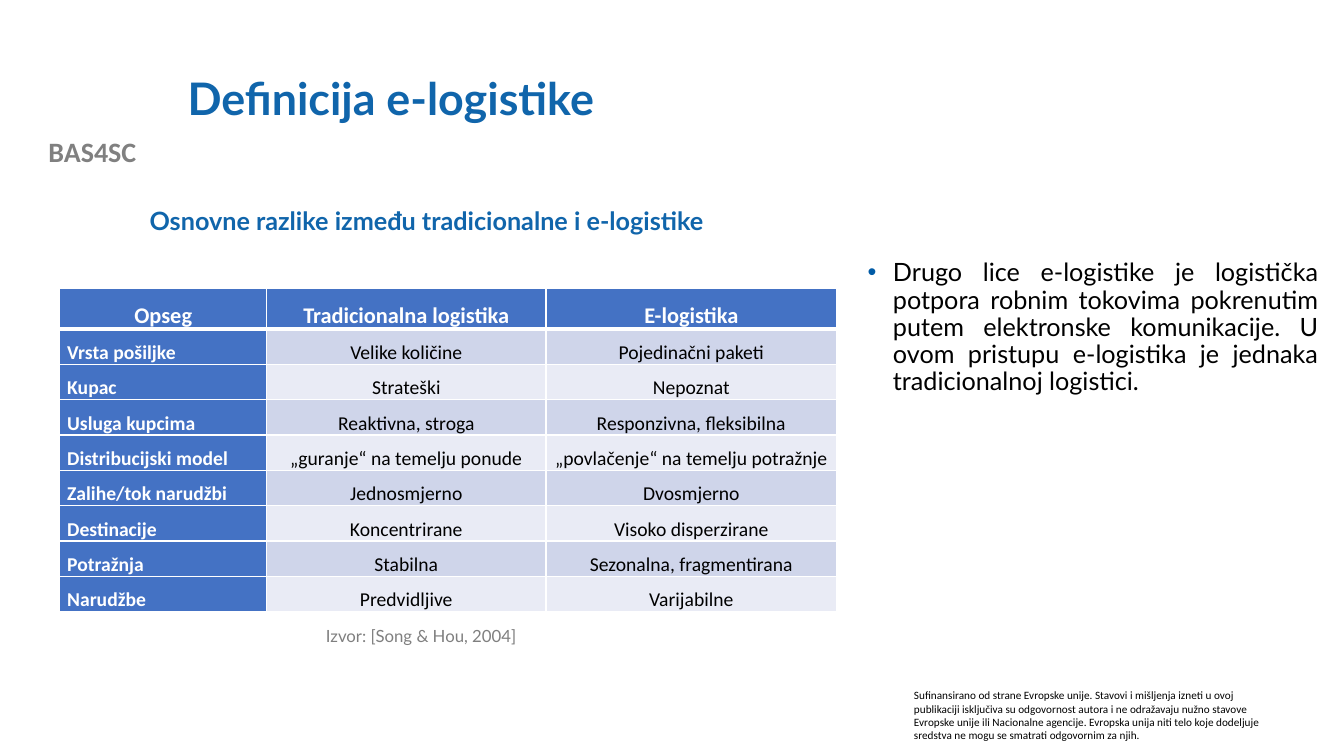
from dataclasses import dataclass

from lxml import etree
from pptx import Presentation
from pptx.dml.color import RGBColor
from pptx.enum.text import MSO_ANCHOR, MSO_AUTO_SIZE, PP_ALIGN
from pptx.oxml.ns import qn
from pptx.util import Pt

LEFT, CENTER, JUSTIFY = PP_ALIGN.LEFT, PP_ALIGN.CENTER, PP_ALIGN.JUSTIFY
TOP, MIDDLE = MSO_ANCHOR.TOP, MSO_ANCHOR.MIDDLE
GROW, FIXED = MSO_AUTO_SIZE.SHAPE_TO_FIT_TEXT, MSO_AUTO_SIZE.NONE
PX = 9525
TITLE_ONLY = 5


@dataclass(frozen=True)
class Theme:
    font: str = "Lato"
    plain_font: str = "Calibri"
    title_blue: str = "1065AB"
    bullet_blue: str = "015BA6"
    table_blue: str = "4472C4"
    band_dark: str = "CFD5EA"
    band_light: str = "E9EBF5"
    black: str = "000000"
    white: str = "FFFFFF"
    project_gray: str = "808080"
    source_gray: str = "7F7F7F"
    title: int = 32
    project: int = 20
    body: int = 18
    header: int = 16
    cell: int = 14
    source: int = 12
    notice: int = 8


T = Theme()

COMPARISON = [
    ("Opseg", "Tradicionalna logistika", "E-logistika"),
    ("Vrsta pošiljke", "Velike količine", "Pojedinačni paketi"),
    ("Kupac", "Strateški", "Nepoznat"),
    ("Usluga kupcima", "Reaktivna, stroga", "Responzivna, fleksibilna"),
    ("Distribucijski model", "„guranje“ na temelju ponude", "„povlačenje“ na temelju potražnje"),
    ("Zalihe/tok narudžbi", "Jednosmjerno", "Dvosmjerno"),
    ("Destinacije", "Koncentrirane", "Visoko disperzirane"),
    ("Potražnja", "Stabilna", "Sezonalna, fragmentirana"),
    ("Narudžbe", "Predvidljive", "Varijabilne"),
]
NOTICE = (
    "Sufinansirano od strane Evropske unije. Stavovi i mišljenja izneti u ovoj publikaciji "
    "isključiva su odgovornost autora i ne odražavaju nužno stavove Evropske unije ili "
    "Nacionalne agencije. Evropska unija niti telo koje dodeljuje sredstva ne mogu se "
    "smatrati odgovornim za njih."
)
BODY = (
    "Drugo lice e-logistike je logistička potpora robnim tokovima pokrenutim putem "
    "elektronske komunikacije. U ovom pristupu e-logistika je jednaka tradicionalnoj logistici."
)


def emu(box):
    return [v * PX for v in box]


def write(tf, text, size, color, font=T.font, bold=False, align=LEFT, spacing=1.0):
    p = tf.paragraphs[0]
    p.alignment = align
    p.line_spacing = spacing
    r = p.add_run()
    r.text = text
    r.font.name = font
    r.font.size = Pt(size)
    r.font.bold = bold
    r.font.color.rgb = RGBColor.from_string(color)
    return p


def add_title(s, box, text):
    sp = s.shapes.title
    sp.left, sp.top, sp.width, sp.height = emu(box)
    tf = sp.text_frame
    tf.word_wrap = True
    tf.auto_size = FIXED
    tf.vertical_anchor = MIDDLE
    write(tf, text, T.title, T.title_blue, bold=True, spacing=0.9)


def add_text(s, box, text, size, color, auto_size=GROW, **style):
    tf = s.shapes.add_textbox(*emu(box)).text_frame
    tf.word_wrap = True
    tf.auto_size = auto_size
    return write(tf, text, size, color, **style)


def add_bullet_text(s, box, text):
    p = add_text(s, box, text, T.body, T.black, align=JUSTIFY, spacing=0.9)
    pPr = p._p.get_or_add_pPr()
    pPr.set("marL", str(24 * PX))
    pPr.set("indent", str(-24 * PX))
    color = etree.SubElement(pPr, qn("a:buClr"))
    etree.SubElement(color, qn("a:srgbClr"), val=T.bullet_blue)
    etree.SubElement(pPr, qn("a:buFont"), typeface="Arial")
    etree.SubElement(pPr, qn("a:buChar"), char="•")


def set_borders(cell, top, bottom):
    tcPr = cell._tc.get_or_add_tcPr()
    for side, width in (("L", 1), ("R", 1), ("T", top), ("B", bottom)):
        ln = etree.SubElement(tcPr, qn(f"a:ln{side}"), w=str(Pt(width)))
        fill = etree.SubElement(ln, qn("a:solidFill"))
        etree.SubElement(fill, qn("a:srgbClr"), val=T.white)


def fill_cell(cell, text, row, col):
    is_header, is_label = row == 0, col == 0
    strong = is_header or is_label
    band = T.band_dark if row % 2 else T.band_light
    set_borders(cell, 3 if row == 1 else 1, 3 if is_header else 1)
    cell.fill.solid()
    cell.fill.fore_color.rgb = RGBColor.from_string(T.table_blue if strong else band)
    cell.margin_left = cell.margin_right = 7 * PX
    cell.margin_top = cell.margin_bottom = 0
    cell.vertical_anchor = MIDDLE if is_header and col != 1 else TOP
    p = write(
        cell.text_frame, text,
        T.header if is_header else T.cell,
        T.white if strong else T.black,
        font=T.plain_font, bold=strong,
        align=JUSTIFY if is_label and not is_header else CENTER,
        spacing=1.5,
    )
    p.space_after = Pt(6)


def add_comparison(s, box, rows, widths, header_height):
    table = s.shapes.add_table(len(rows), len(widths), *emu(box)).table
    for column, width in zip(table.columns, widths):
        column.width = width * PX
    row_height = (box[3] - header_height) // (len(rows) - 1)
    for i, texts in enumerate(rows):
        table.rows[i].height = (row_height if i else header_height) * PX
        for j, text in enumerate(texts):
            fill_cell(table.cell(i, j), text, i, j)


def build_slide(prs):
    s = prs.slides.add_slide(prs.slide_layouts[TITLE_ONLY])
    add_text(s, (0, 123, 176, 42), "BAS4SC", T.project, T.project_gray,
             font=T.plain_font, bold=True, align=CENTER)
    add_text(s, (861, 651, 361, 61), NOTICE, T.notice, T.black, font=T.plain_font)
    add_title(s, (169, 38, 1023, 117), "Definicija e-logistike")
    add_text(s, (301, 593, 351, 50), "Izvor: [Song & Hou, 2004]", T.source,
             T.source_gray, auto_size=FIXED, spacing=0.9)
    add_text(s, (133, 191, 744, 38), "Osnovne razlike između tradicionalne i e-logistike",
             T.body, T.title_blue, bold=True)
    add_bullet_text(s, (817, 243, 448, 140), BODY)
    add_comparison(s, (57, 275, 740, 307), COMPARISON, (197, 266, 277), 38)


def main():
    prs = Presentation()
    prs.slide_width, prs.slide_height = 1280 * PX, 720 * PX
    build_slide(prs)
    prs.save("out.pptx")


if __name__ == "__main__":
    main()
